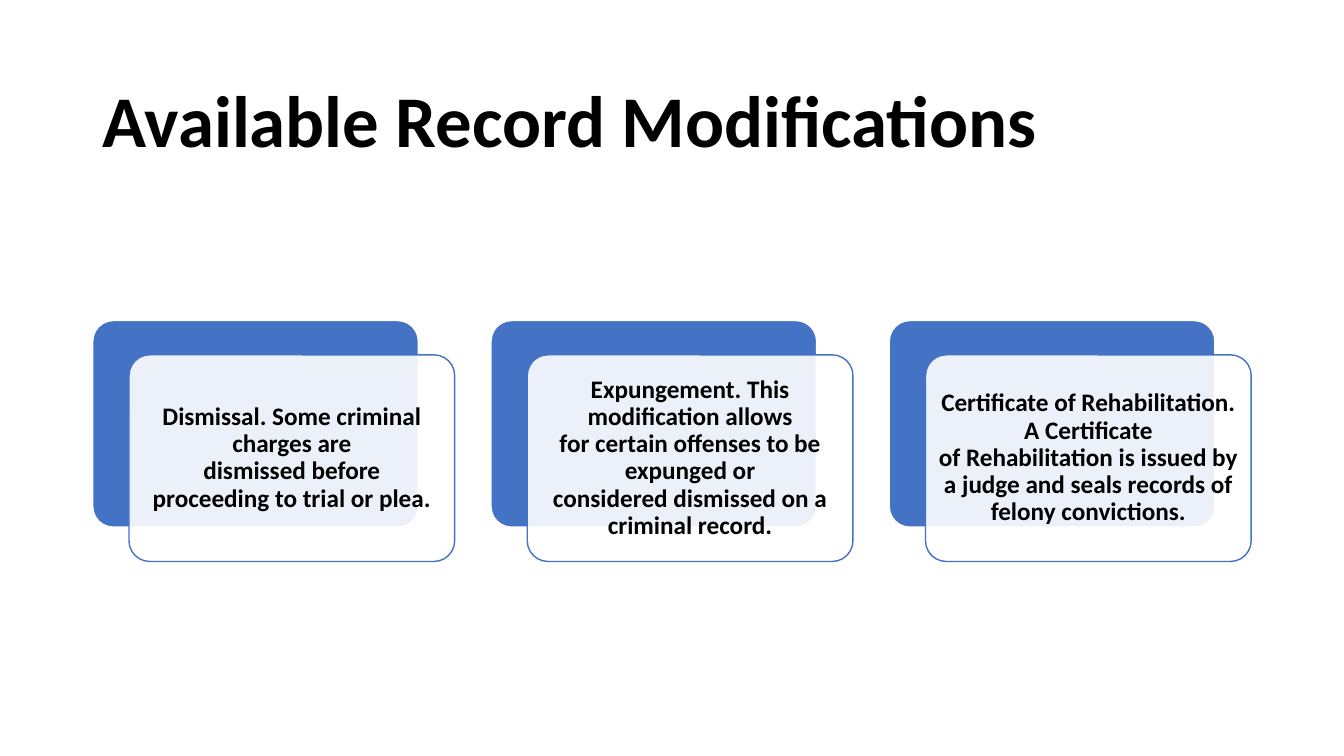
from pptx import Presentation
from pptx.dml.color import RGBColor
from pptx.enum.shapes import MSO_SHAPE
from pptx.enum.text import MSO_ANCHOR, PP_ALIGN
from pptx.oxml.ns import qn
from pptx.util import Inches, Pt
from lxml import etree

ROUND_RECT = MSO_SHAPE.ROUNDED_RECTANGLE
MIDDLE = MSO_ANCHOR.MIDDLE
LEFT, CENTER = PP_ALIGN.LEFT, PP_ALIGN.CENTER
BLUE = RGBColor(0x44, 0x72, 0xC4)
WHITE = RGBColor(0xFF, 0xFF, 0xFF)
BLACK = RGBColor(0, 0, 0)

SLIDE_W, SLIDE_H = 13.33, 7.5
MARGIN = 0.92
CARD_W, CARD_H = 3.23, 2.05
CARD_PITCH = 3.95
SHIFT_X, SHIFT_Y = 0.36, 0.34
CARD_INSET = 0.07
NBSP = chr(160)

TITLE = "Available Record Modifications"
MODIFICATIONS = [
    f"Dismissal. Some criminal charges are dismissed{NBSP}before proceeding to trial or plea.",
    f"Expungement. This modification allows for{NBSP}certain offenses to be expunged "
    f"or considered{NBSP}dismissed on a criminal record.",
    f"Certificate of Rehabilitation. A Certificate of{NBSP}Rehabilitation is issued "
    f"by a judge and seals{NBSP}records of felony convictions.",
]


def write_text(shape, text, size, align):
    tf = shape.text_frame
    tf.word_wrap = True
    tf.vertical_anchor = MIDDLE
    p = tf.paragraphs[0]
    p.alignment = align
    p.line_spacing = 0.9
    r = p.add_run()
    r.text = text
    font_format = {"name": "Calibri", "size": Pt(size), "bold": True}
    for name, value in font_format.items():
        setattr(r.font, name, value)
    r.font.color.rgb = BLACK
    return tf


def add_title(s, x, y, w, h):
    sp = s.shapes.add_textbox(Inches(x), Inches(y), Inches(w), Inches(h))
    write_text(sp, TITLE, 52, LEFT)


def add_panel(s, x, y, fill, line):
    sp = s.shapes.add_shape(ROUND_RECT, Inches(x), Inches(y), Inches(CARD_W), Inches(CARD_H))
    sp.adjustments[0] = 0.1
    sp.shadow.inherit = False
    sp.fill.solid()
    sp.fill.fore_color.rgb = fill
    sp.line.color.rgb = line
    sp.line.width = Pt(1)
    return sp


def add_card(s, x, y, text):
    add_panel(s, x, y, BLUE, WHITE)
    front = add_panel(s, x + SHIFT_X, y + SHIFT_Y, WHITE, BLUE)
    color = front.fill._xPr.find(qn("a:solidFill")).find(qn("a:srgbClr"))
    etree.SubElement(color, qn("a:alpha")).set("val", "90000")
    tf = write_text(front, text, 18, CENTER)
    for side in ("left", "top", "right", "bottom"):
        setattr(tf, f"margin_{side}", Inches(CARD_INSET))


def add_cards(s, x, y):
    for col, text in enumerate(MODIFICATIONS):
        add_card(s, x + col * CARD_PITCH, y, text)


def main():
    prs = Presentation()
    prs.slide_width = Inches(SLIDE_W)
    prs.slide_height = Inches(SLIDE_H)
    s = prs.slides.add_slide(prs.slide_layouts[6])
    add_title(s, MARGIN, 0.61, SLIDE_W - 2 * MARGIN, 1.24)
    add_cards(s, MARGIN, 3.18)
    prs.save("out.pptx")


if __name__ == "__main__":
    main()
